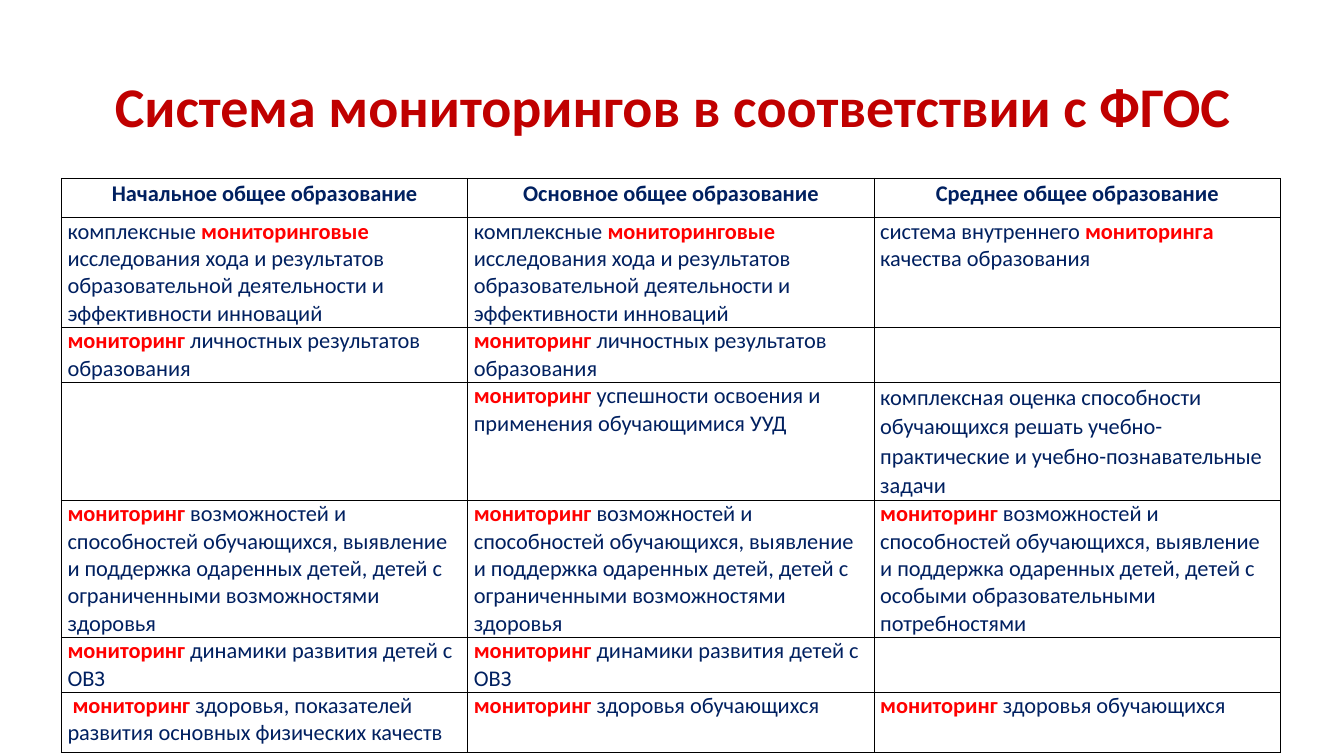
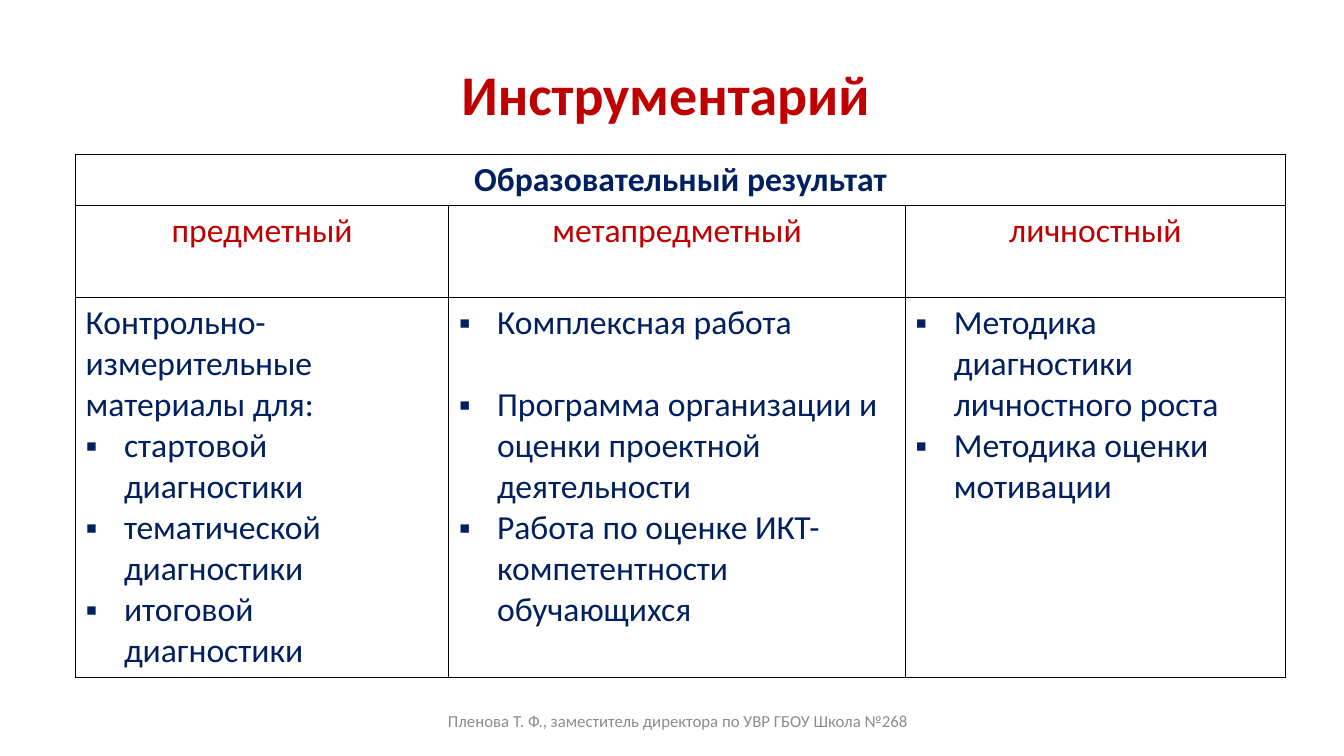
import pptx
import pptx.dml.color
import pptx.enum.text
import pptx.oxml
import pptx.oxml.ns
import pptx.util
from lxml import etree

Inches = pptx.util.Inches
Pt = pptx.util.Pt
RGBColor = pptx.dml.color.RGBColor
Align = pptx.enum.text.PP_ALIGN
Anchor = pptx.enum.text.MSO_ANCHOR

FONT = "Calibri"
WHITE = RGBColor(0xFF, 0xFF, 0xFF)
NAVY = RGBColor(0x00, 0x20, 0x60)
DARK_RED = RGBColor(0xC0, 0x00, 0x00)
BRIGHT_RED = RGBColor(0xFF, 0x00, 0x00)
GREY = RGBColor(0x8C, 0x8C, 0x8C)
BORDER = "000000"
BULLET = "▪"
BULLET_INDENT = Inches(0.38)

# Text between asterisks is set in bold red
RESEARCH = ("комплексные *мониторинговые* исследования хода и результатов "
            "образовательной деятельности и эффективности инноваций")
PERSONAL = "*мониторинг* личностных результатов образования"
ABILITIES = ("*мониторинг* возможностей и способностей обучающихся, выявление "
             "и поддержка одаренных детей, детей с ")
LIMITED = ABILITIES + "ограниченными возможностями здоровья"
DYNAMICS = "*мониторинг* динамики развития детей с ОВЗ"
HEALTH = "*мониторинг* здоровья обучающихся"

MONITORING_HEADS = ("Начальное общее образование", "Основное общее образование",
                    "Среднее общее образование")
MONITORING_ROWS = (
    (RESEARCH, RESEARCH,
     "система внутреннего *мониторинга* качества образования"),
    (PERSONAL, PERSONAL, ""),
    ("", "*мониторинг* успешности освоения и применения обучающимися УУД",
     "комплексная оценка способности обучающихся решать "
     "учебно-практические и учебно-познавательные задачи"),
    (LIMITED, LIMITED, ABILITIES + "особыми образовательными потребностями"),
    (DYNAMICS, DYNAMICS, ""),
    (" *мониторинг* здоровья, показателей развития основных физических качеств",
     HEALTH, HEALTH),
)
LOOSE_CELL = (3, 2)  # the one body cell with wider line spacing

RESULT_KINDS = ("предметный", "метапредметный", "личностный")
RESULT_TOOLS = (
    ("Контрольно-измерительные материалы для:", "▪стартовой диагностики",
     "▪тематической диагностики", "▪итоговой диагностики"),
    ("▪Комплексная работа",
     "▪Программа организации и оценки проектной деятельности",
     "▪Работа по оценке ИКТ-компетентности обучающихся"),
    ("▪Методика диагностики личностного роста", "▪Методика оценки мотивации"),
)


def add_bullet(para):
    """Give a paragraph a square bullet and a hanging indent."""
    properties = para._p.get_or_add_pPr()
    properties.set("marL", str(BULLET_INDENT))
    properties.set("indent", str(-BULLET_INDENT))
    for tag, name, value in (("a:buFont", "typeface", "Arial"),
                             ("a:buChar", "char", BULLET)):
        etree.SubElement(properties, pptx.oxml.ns.qn(tag)).set(name, value)


def write_text(frame, lines, size, color, bold=False, align=Align.LEFT,
               line_spacing=None, first_gap=0):
    """Write one paragraph per line; first_gap is the space after the first."""
    frame.word_wrap = True
    for index, line in enumerate(lines):
        para = frame.paragraphs[0] if index == 0 else frame.add_paragraph()
        para.alignment = align
        para.space_before = Pt(0)
        para.space_after = Pt(0 if index else first_gap)
        if line_spacing:
            para.line_spacing = line_spacing
        if line.startswith(BULLET):
            add_bullet(para)
        for part, words in enumerate(line.removeprefix(BULLET).split("*")):
            if not words:
                continue
            accent = part % 2 == 1
            span = para.add_run()
            span.text = words
            span.font.name = FONT
            span.font.size = Pt(size)
            span.font.bold = bold or accent
            span.font.color.rgb = BRIGHT_RED if accent else color


def add_page(deck, title, left, top, width, height):
    """Add a page with its title in the template's placeholder."""
    page = deck.slides.add_slide(deck.slide_layouts[5])
    box = page.shapes.title
    box.left, box.top = Inches(left), Inches(top)
    box.width, box.height = Inches(width), Inches(height)
    box.text_frame.auto_size = pptx.enum.text.MSO_AUTO_SIZE.NONE
    box.text_frame.vertical_anchor = Anchor.MIDDLE
    write_text(box.text_frame, [title], 40, DARK_RED, bold=True,
               align=Align.CENTER)
    return page


def style_cell(cell, side, edge):
    """Set margins, thin black borders and a white fill."""
    cell.margin_left = cell.margin_right = Inches(side)
    cell.margin_top = cell.margin_bottom = Inches(edge)
    properties = cell._tc.get_or_add_tcPr()
    for name in ("lnL", "lnR", "lnT", "lnB"):
        properties.append(pptx.oxml.parse_xml(
            f'<a:{name} {pptx.oxml.ns.nsdecls("a")} w="{Pt(1)}"><a:solidFill>'
            f'<a:srgbClr val="{BORDER}"/></a:solidFill></a:{name}>'))
    cell.fill.solid()
    cell.fill.fore_color.rgb = WHITE


def add_grid(page, left, top, columns, rows, side, edge):
    """Add a plain bordered table with the given column and row sizes."""
    table = page.shapes.add_table(
        len(rows), len(columns), Inches(left), Inches(top),
        Inches(sum(columns)), Inches(sum(rows))).table
    table.first_row = table.horz_banding = False
    for column, width in zip(table.columns, columns):
        column.width = Inches(width)
    for row, height in zip(table.rows, rows):
        row.height = Inches(height)
        for cell in row.cells:
            style_cell(cell, side, edge)
    return table


def add_footer(page, text, left, top, width, height):
    box = page.shapes.add_textbox(Inches(left), Inches(top),
                                  Inches(width), Inches(height))
    box.text_frame.vertical_anchor = Anchor.MIDDLE
    write_text(box.text_frame, [text], 12, GREY, align=Align.CENTER)


def build_monitoring_page(deck):
    page = add_page(deck, "Система мониторингов в соответствии с ФГОС",
                    0.92, 0.42, 11.5, 1.25)
    table = add_grid(page, 0.61, 1.77, [4.03] * 3,
                     [0.39, 1.09, 0.54, 1.17, 1.36, 0.54, 0.6], 0.06, 0)
    # Header row
    for column, head in enumerate(MONITORING_HEADS):
        write_text(table.cell(0, column).text_frame, [head], 16, NAVY,
                   bold=True, align=Align.CENTER, line_spacing=1.07)
    # Body rows
    for row, texts in enumerate(MONITORING_ROWS, start=1):
        for column, text in enumerate(texts):
            spacing = 1.07 if (row, column) == LOOSE_CELL else None
            write_text(table.cell(row, column).text_frame, [text], 16, NAVY,
                       line_spacing=spacing)


def build_tools_page(deck):
    page = add_page(deck, "Инструментарий", 2.1, 0.3, 9, 1.25)
    table = add_grid(page, 0.75, 1.53, [3.7, 4.53, 3.77],
                     [0.51, 0.91, 3.77], 0.1, 0.05)
    # Heading across all columns
    table.cell(0, 0).merge(table.cell(0, 2))
    write_text(table.cell(0, 0).text_frame, ["Образовательный результат"],
               24, NAVY, bold=True, align=Align.CENTER)
    # Kinds of result and their tools
    for column, (kind, tools) in enumerate(zip(RESULT_KINDS, RESULT_TOOLS)):
        write_text(table.cell(1, column).text_frame, [kind], 24, DARK_RED,
                   align=Align.CENTER)
        write_text(table.cell(2, column).text_frame, tools, 24, NAVY,
                   first_gap=29.3 if column == 1 else 0)
    add_footer(page, "Пленова Т. Ф., заместитель директора по УВР ГБОУ Школа №268",
               3.22, 6.95, 7.01, 0.4)


def main():
    deck = pptx.Presentation()
    deck.slide_width, deck.slide_height = Inches(13.33), Inches(7.5)
    build_monitoring_page(deck)
    build_tools_page(deck)
    deck.save("out.pptx")


if __name__ == "__main__":
    main()
